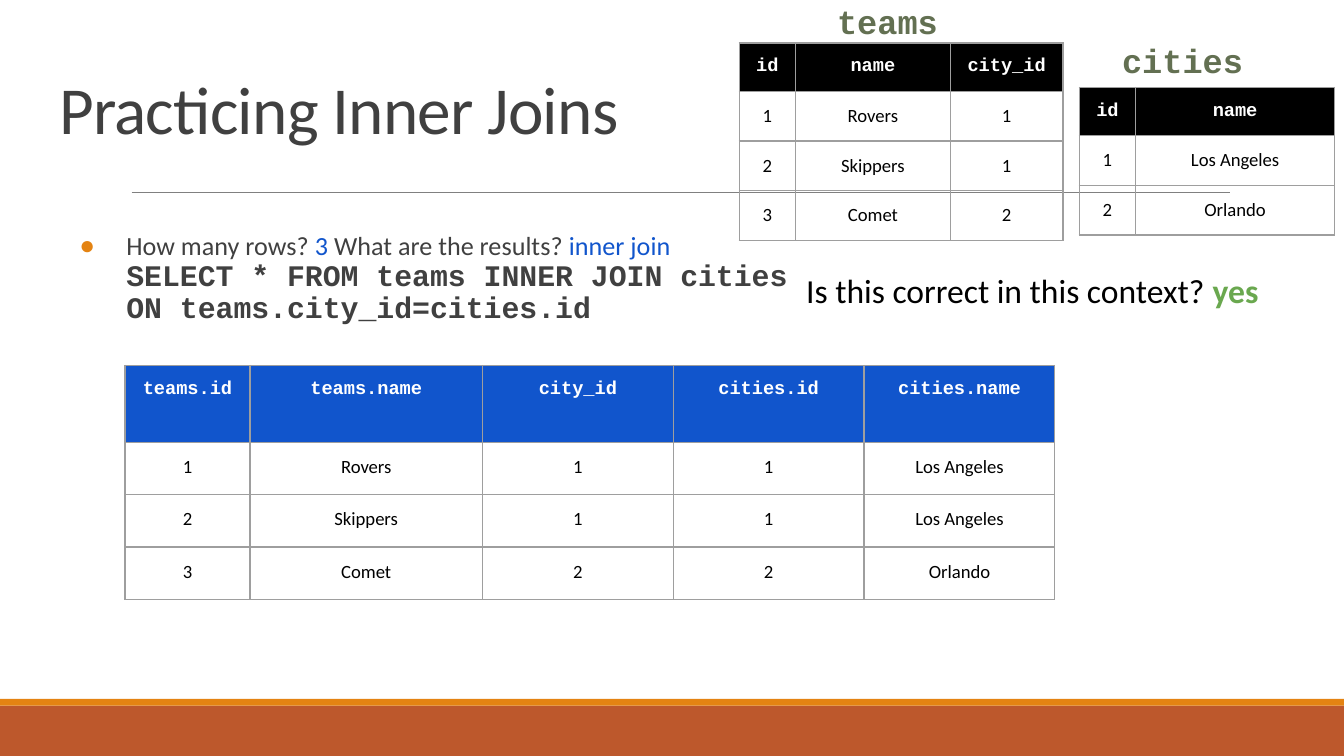
from lxml import etree
from pptx import Presentation
from pptx.dml.color import RGBColor
from pptx.enum import shapes, text
from pptx.oxml import ns, parse_xml
from pptx.util import Inches, Pt

SANS, MONO = "Calibri", "Courier New"
DARK, BLUE, BLACK = "404040", "1155CC", "000000"
color = RGBColor.from_string


def write(frame, runs, size, font, inset=0.1, bold=None):
    """Fill the frame's first paragraph with (text, colour) runs."""
    frame.word_wrap = True
    frame.auto_size = text.MSO_AUTO_SIZE.NONE
    frame.vertical_anchor = text.MSO_ANCHOR.TOP
    frame.margin_left = frame.margin_right = Inches(0.1)
    frame.margin_top = frame.margin_bottom = Inches(inset)
    paragraph = frame.paragraphs[0]
    paragraph.space_before = Pt(0)
    paragraph.alignment = text.PP_ALIGN.LEFT
    paragraph.font.size, paragraph.font.name, paragraph.font.bold = Pt(size), font, bold
    for words, hex_color in runs:
        run = paragraph.add_run()
        run.text = words
        run.font.color.rgb = color(hex_color)
    return paragraph


def add_grid(left, top, widths, heights, header_fill, rows):
    """Add a bordered table whose first row is a filled header."""
    table = slide.shapes.add_table(len(rows), len(widths), Inches(left), Inches(top),
                                   Inches(sum(widths)), Inches(sum(heights))).table
    table.horz_banding = table.first_row = False
    for column, width in zip(table.columns, widths):
        column.width = Inches(width)
    for r, (row, height) in enumerate(zip(rows, heights)):
        table.rows[r].height = Inches(height)
        for c, words in enumerate(row):
            cell = table.cell(r, c)
            cell.margin_left = cell.margin_right = Inches(0.1)
            cell.margin_top = cell.margin_bottom = Inches(0.1)
            properties = cell._tc.get_or_add_tcPr()
            for side in ("lnL", "lnR", "lnT", "lnB"):
                properties.append(parse_xml(
                    f'<a:{side} {ns.nsdecls("a")} w="9525"><a:solidFill>'
                    f'<a:srgbClr val="9E9E9E"/></a:solidFill></a:{side}>'))
            if r == 0:
                cell.fill.solid()
                cell.fill.fore_color.rgb = color(header_fill)
            else:
                cell.fill.background()
            paragraph = cell.text_frame.paragraphs[0]
            paragraph.alignment = text.PP_ALIGN.CENTER
            run = paragraph.add_run()
            run.text = words
            run.font.size, run.font.bold = Pt(10), r == 0
            run.font.name = SANS if r else MONO
            run.font.color.rgb = color(BLACK if r else "FFFFFF")


deck = Presentation()
deck.slide_width = Inches(10)
deck.slide_height = Inches(10 * 9 / 16)
slide = deck.slides.add_slide(deck.slide_layouts[1])

# Footer bands and title rule
for top, height, fill in [(5.25, 0.38, "BD582C"), (5.2, 0.05, "E48312")]:
    band = slide.shapes.add_shape(shapes.MSO_SHAPE.RECTANGLE, 0, Inches(top),
                                  Inches(10), Inches(height))
    band.shadow.inherit = False
    band.fill.solid()
    band.fill.fore_color.rgb = color(fill)
    band.line.fill.background()
rule = slide.shapes.add_connector(shapes.MSO_CONNECTOR.STRAIGHT, Inches(0.98), Inches(1.43),
                                  Inches(9.15), Inches(1.43))
rule.line.color.rgb = color("808080")
rule.line.width = Pt(0.5)
etree.SubElement(rule._element.spPr, ns.qn("a:effectLst"))

# Title
title = slide.shapes.title
title.left, title.top, title.width, title.height = map(Inches, (0.34, 0.49, 9.32, 0.63))
heading = write(title.text_frame, [("Practicing Inner Joins", DARK)], 36, SANS)
heading.line_spacing = 0.85
heading.runs[0]._r.get_or_add_rPr().set("spc", "-40")

# Question and query
body = slide.placeholders[1]
body.left, body.top, body.width, body.height = map(Inches, (0.34, 1.63, 5.67, 0.99))
bullet = body.text_frame.paragraphs[0]._p.get_or_add_pPr()
bullet.set("marL", str(Inches(0.5)))
bullet.set("indent", str(Inches(-0.35)))
for tag in (f'<a:buClr {ns.nsdecls("a")}><a:srgbClr val="E48312"/></a:buClr>',
            f'<a:buChar {ns.nsdecls("a")} char="●"/>'):
    bullet.append(parse_xml(tag))
question = write(body.text_frame, [("How many rows? ", DARK), ("3 ", BLUE),
                                   ("What are the results? ", DARK), ("inner join", BLUE)],
                 14, SANS)
question.line_spacing = 0.9
question.add_line_break()
query = question.add_run()
query.text = "SELECT * FROM teams INNER JOIN cities ON teams.city_id=cities.id"
query.font.size, query.font.name, query.font.bold = Pt(16), MONO, True
query.font.color.rgb = color(DARK)

# Source tables and their join
teams = [("1", "Rovers", "1"), ("2", "Skippers", "1"), ("3", "Comet", "2")]
cities = [("1", "Los Angeles"), ("2", "Orlando")]
city_names = dict(cities)
joined = [(*team, team[2], city_names[team[2]]) for team in teams]

add_grid(0.93, 2.72, [0.93, 1.73, 1.42, 1.42, 1.42], [0.57] + [0.39] * 3, BLUE,
         [("teams.id", "teams.name", "city_id", "cities.id", "cities.name"), *joined])
add_grid(5.5, 0.32, [0.42, 1.15, 0.84], [0.36] + [0.37] * 3, BLACK,
         [("id", "name", "city_id"), *teams])
add_grid(8.03, 0.65, [0.42, 1.48], [0.36] + [0.37] * 2, BLACK, [("id", "name"), *cities])

# Table names
for name, left, top, width, height in [("teams", 6.13, -0.14, 1.66, 0.48),
                                       ("cities", 8.25, 0.15, 1.35, 0.65)]:
    label = slide.shapes.add_textbox(*map(Inches, (left, top, width, height)))
    write(label.text_frame, [(name, "637052")], 18, MONO, bold=True).line_spacing = 1.15

# Check question
check = slide.shapes.add_textbox(*map(Inches, (5.75, 1.96, 3.85, 0.4)))
answer = write(check.text_frame, [("Is this correct in this context? ", BLACK),
                                  ("yes", "6AA84F")], 18, SANS, inset=0.05)
answer._p.get_or_add_pPr().set("marL", str(Inches(0.15)))
answer.runs[1].font.bold = True

deck.save("out.pptx")
